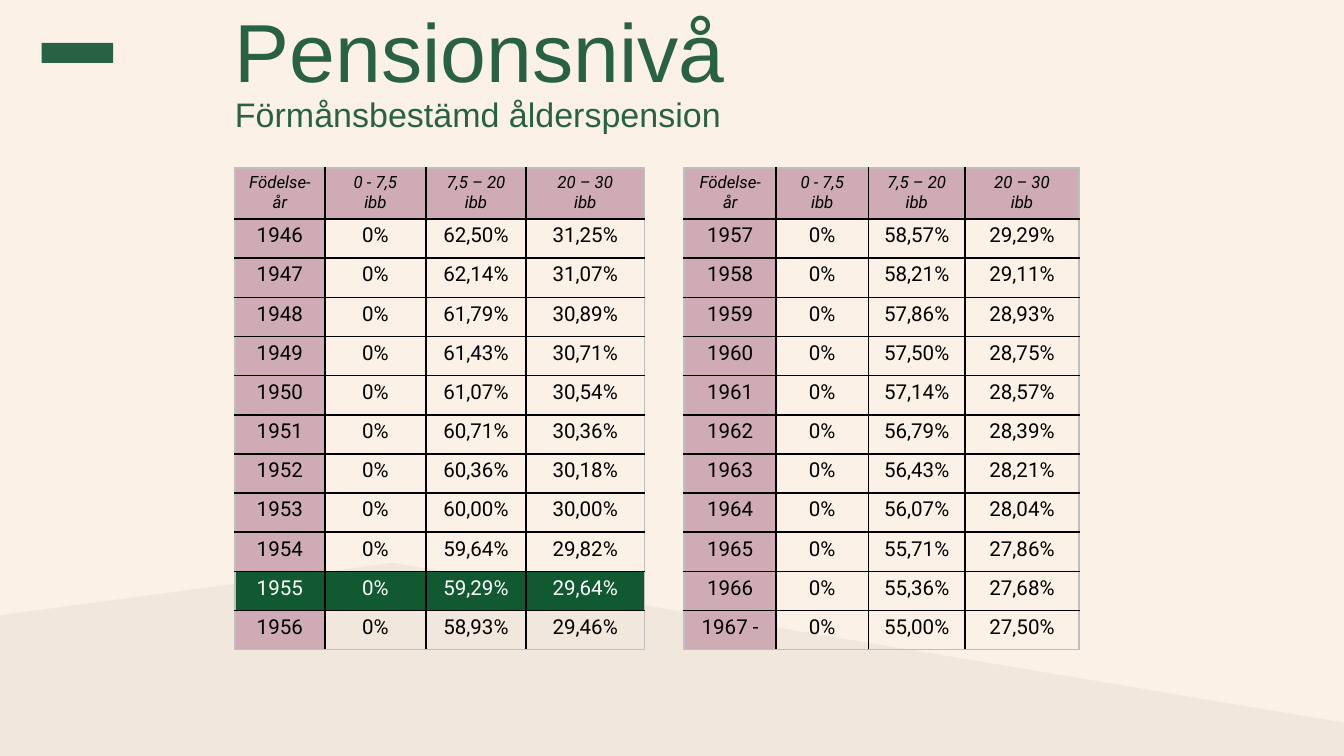
import pptx
import pptx.dml.color
import pptx.enum.shapes
import pptx.enum.text
import pptx.oxml.ns
import pptx.util
import lxml.etree

Cm = pptx.util.Cm
RGBColor = pptx.dml.color.RGBColor
PP_ALIGN = pptx.enum.text.PP_ALIGN

CREAM = RGBColor(0xFC, 0xF1, 0xE7)
SAND = RGBColor(0xF2, 0xE7, 0xDD)
TITLE_GREEN = RGBColor(0x29, 0x61, 0x44)
ROW_GREEN = RGBColor(0x11, 0x59, 0x31)
PINK = RGBColor(0xCF, 0xAB, 0xB5)
BLACK = RGBColor(0, 0, 0)
WHITE = RGBColor(0xFF, 0xFF, 0xFF)
GREY = RGBColor(0xBF, 0xBF, 0xBF)

HEADERS = ["Födelse-år", "0 - 7,5\nibb", "7,5 – 20 ibb", "20 – 30\nibb"]
HIGHLIGHT_YEAR = "1955"
OPAQUE_YEAR = "1953"
HEADER_HEIGHT = Cm(0.96)
ROW_HEIGHT = Cm(0.74)

TABLES = [
    (4.44, [1.7, 1.91, 1.89, 2.24], [
        ("1946", "62,50%", "31,25%"),
        ("1947", "62,14%", "31,07%"),
        ("1948", "61,79%", "30,89%"),
        ("1949", "61,43%", "30,71%"),
        ("1950", "61,07%", "30,54%"),
        ("1951", "60,71%", "30,36%"),
        ("1952", "60,36%", "30,18%"),
        ("1953", "60,00%", "30,00%"),
        ("1954", "59,64%", "29,82%"),
        ("1955", "59,29%", "29,64%"),
        ("1956", "58,93%", "29,46%"),
    ]),
    (12.93, [1.74, 1.74, 1.83, 2.15], [
        ("1957", "58,57%", "29,29%"),
        ("1958", "58,21%", "29,11%"),
        ("1959", "57,86%", "28,93%"),
        ("1960", "57,50%", "28,75%"),
        ("1961", "57,14%", "28,57%"),
        ("1962", "56,79%", "28,39%"),
        ("1963", "56,43%", "28,21%"),
        ("1964", "56,07%", "28,04%"),
        ("1965", "55,71%", "27,86%"),
        ("1966", "55,36%", "27,68%"),
        ("1967 -", "55,00%", "27,50%"),
    ]),
]


def add_text(para, text, size, color, font="Roboto", italic=False):
    span = para.add_run()
    span.text = text
    span.font.size = pptx.util.Pt(size)
    span.font.name = font
    span.font.color.rgb = color
    span.font.italic = italic


def set_borders(cell, colors):
    qn = pptx.oxml.ns.qn
    properties = cell._tc.get_or_add_tcPr()
    for position, (side, color) in enumerate(colors.items()):
        line = lxml.etree.Element(qn("a:" + side), w=str(pptx.util.Pt(1)))
        fill = lxml.etree.SubElement(line, qn("a:solidFill"))
        lxml.etree.SubElement(fill, qn("a:srgbClr"), val=str(color))
        properties.insert(position, line)


deck = pptx.Presentation()
deck.slide_width = Cm(25.4)
deck.slide_height = Cm(14.29)
page = deck.slides.add_slide(deck.slide_layouts[5])
page.background.fill.solid()
page.background.fill.fore_color.rgb = CREAM

outline = page.shapes.build_freeform(Cm(0), Cm(11.63))
outline.add_line_segments([
    (Cm(7.42), Cm(10.64)), (Cm(25.4), Cm(13.66)),
    (Cm(25.4), Cm(14.29)), (Cm(0), Cm(14.29)),
])
hill = outline.convert_to_shape()
logo_block = page.shapes.add_shape(
    pptx.enum.shapes.MSO_SHAPE.RECTANGLE, Cm(0.79), Cm(0.81), Cm(1.35), Cm(0.38))
for shape, color in [(hill, SAND), (logo_block, TITLE_GREEN)]:
    shape.shadow.inherit = False
    shape.fill.solid()
    shape.fill.fore_color.rgb = color
    shape.line.fill.background()

title = page.shapes.title
title.left, title.top, title.width, title.height = Cm(4.44), Cm(0.38), Cm(15.95), Cm(2.16)
box = title.text_frame
box.auto_size = pptx.enum.text.MSO_AUTO_SIZE.NONE
box.word_wrap = True
box.vertical_anchor = pptx.enum.text.MSO_ANCHOR.BOTTOM
box.margin_left = box.margin_right = box.margin_top = box.margin_bottom = 0
para = box.paragraphs[0]
para.alignment = PP_ALIGN.LEFT
para.line_spacing = 0.85
add_text(para, "Pensionsnivå", size=44.1, color=TITLE_GREEN, font="Arial")
para.add_line_break()
add_text(para, "Förmånsbestämd ålderspension", size=18.2, color=TITLE_GREEN, font="Arial")

for left, widths, levels in TABLES:
    rows = [HEADERS] + [(year, "0%", middle, upper) for year, middle, upper in levels]
    last_row, last_column = len(rows) - 1, len(widths) - 1
    table = page.shapes.add_table(
        len(rows), len(widths), Cm(left), Cm(3.18), Cm(sum(widths)),
        HEADER_HEIGHT + ROW_HEIGHT * last_row).table
    for column, width in zip(table.columns, widths):
        column.width = Cm(width)
    for r, values in enumerate(rows):
        table.rows[r].height = ROW_HEIGHT if r else HEADER_HEIGHT
        highlighted = values[0] == HIGHLIGHT_YEAR
        for c, value in enumerate(values):
            cell = table.cell(r, c)
            cell.margin_left = cell.margin_right = Cm(0.18)
            cell.margin_top = cell.margin_bottom = Cm(0.09)
            if highlighted:
                color = ROW_GREEN
            elif r == 0 or c == 0:
                color = PINK
            else:
                color = CREAM if values[0] == OPAQUE_YEAR else None
            if color is None:
                cell.fill.background()
            else:
                cell.fill.solid()
                cell.fill.fore_color.rgb = color
            set_borders(cell, {
                "lnL": BLACK if c else GREY,
                "lnR": BLACK if c < last_column else GREY,
                "lnT": BLACK if r else GREY,
                "lnB": BLACK if r < last_row else GREY,
            })
            for number, text in enumerate(value.split("\n")):
                box = cell.text_frame
                para = box.add_paragraph() if number else box.paragraphs[0]
                para.alignment = PP_ALIGN.CENTER
                add_text(para, text, size=11 if r else 9,
                         color=WHITE if highlighted else BLACK, italic=r == 0)

deck.save("out.pptx")
